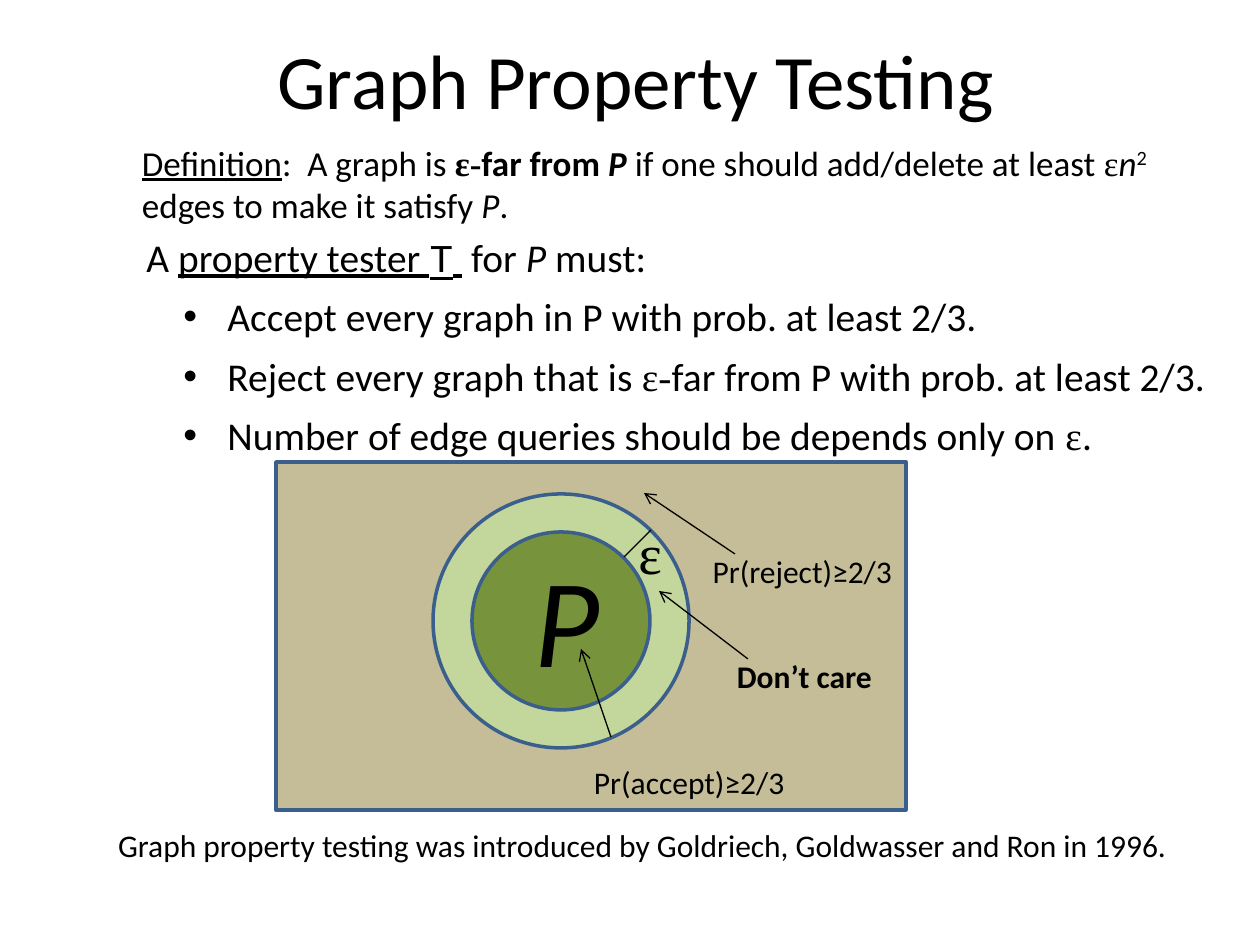
"""Build the Graph Property Testing slide."""
from lxml.etree import SubElement
from pptx import Presentation
from pptx.dml.color import RGBColor
from pptx.enum.shapes import MSO_CONNECTOR as Connector, MSO_SHAPE as Shape
from pptx.enum.text import MSO_ANCHOR as Anchor, PP_ALIGN as Align
from pptx.oxml.ns import qn
from pptx.util import Pt

SCALE = 914400 / 126
SERIF = "Times New Roman"


def emu(*lengths):
    return [round(length * SCALE) for length in lengths]


def add_runs(paragraph, size, runs):
    for text, style in runs:
        run = paragraph.add_run()
        run.text = text
        font = run.font
        font.size = Pt(size)
        font.name = style.get("font", "Calibri")
        font.color.rgb = RGBColor.from_string("000000")
        font.bold = style.get("bold", False)
        font.italic = style.get("italic", False)
        font.underline = style.get("underline", False)
        if "baseline" in style:
            run._r.get_or_add_rPr().set("baseline", style["baseline"])


presentation = Presentation()
presentation.slide_width, presentation.slide_height = emu(1260, 945)
slide = presentation.slides.add_slide(presentation.slide_layouts[5])
shapes = slide.shapes

title = shapes.title
title.left, title.top, title.width, title.height = emu(69, 0, 1134, 158)
title.text_frame.vertical_anchor = Anchor.MIDDLE
title_paragraph = title.text_frame.paragraphs[0]
title_paragraph.alignment = Align.CENTER
add_runs(title_paragraph, 44, [("Graph Property Testing", {})])

for preset, box, color in [
    (Shape.RECTANGLE, (276, 462, 630, 348), "C4BD97"),
    (Shape.OVAL, (433, 494, 256, 254), "C3D69B"),
    (Shape.OVAL, (472, 532, 178, 178), "77933C"),
]:
    region = shapes.add_shape(preset, *emu(*box))
    region.shadow.inherit = False
    region.fill.solid()
    region.fill.fore_color.rgb = RGBColor.from_string(color)
    region.line.color.rgb = RGBColor.from_string("3A5F8C")
    region.line.width = Pt(2)

for ends, has_arrow in [
    ((624, 557, 651, 530), False),
    ((611, 737, 581, 649), True),
    ((735, 554, 644, 493), True),
    ((748, 659, 659, 591), True),
]:
    connector = shapes.add_connector(Connector.STRAIGHT, *emu(*ends))
    connector.line.color.rgb = RGBColor.from_string("000000")
    connector.line.width = Pt(0.75)
    if has_arrow:
        SubElement(connector.line._get_or_add_ln(), qn("a:tailEnd"), type="arrow")
    SubElement(connector._element.spPr, qn("a:effectLst"))

definition = [
    ("Definition", {"underline": True}),
    (":  A graph is ", {}),
    ("ε-", {"font": SERIF, "bold": True}),
    ("far from ", {"bold": True}),
    ("P ", {"bold": True, "italic": True}),
    ("if one should add/delete at least ", {}),
    ("ε", {"font": SERIF}),
    ("n", {"italic": True}),
    ("2", {"baseline": "30000"}),
    (" edges to make it satisfy ", {}),
    ("P", {"italic": True}),
    (".", {}),
]
credit = "Graph property testing was introduced by Goldriech, Goldwasser and Ron in 1996."
for box, inset, align, size, runs in [
    ((532, 535, 68, 165), 0, Align.RIGHT, 72, [("P", {"italic": True})]),
    ((636, 512, 26, 81), 0, Align.RIGHT, 32, [("ε", {"font": SERIF})]),
    ((581, 757, 238, 71), 13, Align.LEFT, 18, [("Pr(accept)≥2/3", {})]),
    ((698, 546, 207, 79), 13, Align.RIGHT, 18, [("Pr(reject)≥2/3", {})]),
    ((722, 651, 163, 45), 13, Align.RIGHT, 18, [("Don’t care", {"bold": True})]),
    ((105, 820, 1092, 50), 13, Align.LEFT, 18, [(credit, {})]),
    ((129, 135, 1082, 97), 13, Align.LEFT, 20, definition),
]:
    frame = shapes.add_textbox(*emu(*box)).text_frame
    frame.word_wrap = True
    frame.margin_left, frame.margin_right = emu(inset, inset)
    frame.paragraphs[0].alignment = align
    add_runs(frame.paragraphs[0], size, runs)

tester_frame = shapes.add_textbox(*emu(108, 236, 1152, 227)).text_frame
tester_frame.word_wrap = True
heading = tester_frame.paragraphs[0]
heading.line_spacing = 0.8
heading.space_before = Pt(7)
heading._p.get_or_add_pPr().set("marL", str(emu(26)[0]))
add_runs(heading, 22.5, [
    ("A ", {}),
    ("property tester ", {"underline": True}),
    ("T", {"font": "Courier New", "underline": True}),
    (" ", {"underline": True}),
    (" for ", {}),
    ("P", {"italic": True}),
    (" must:", {}),
])
margin, indent = emu(107, -44)
for runs in [
    [("Accept every graph in P with prob. at least 2/3.", {})],
    [("Reject every graph that is ", {}), ("ε-", {"font": SERIF}),
     ("far from P with prob. at least 2/3.", {})],
    [("Number of edge queries should be depends only on ", {}),
     ("ε", {"font": SERIF}), (".", {})],
]:
    paragraph = tester_frame.add_paragraph()
    paragraph.level = 1
    paragraph.space_before = Pt(7)
    properties = paragraph._p.get_or_add_pPr()
    properties.set("marL", str(margin))
    properties.set("indent", str(indent))
    SubElement(properties, qn("a:buFont"), typeface="Arial")
    SubElement(properties, qn("a:buChar"), char="•")
    add_runs(paragraph, 22.5, runs)

presentation.save("out.pptx")
